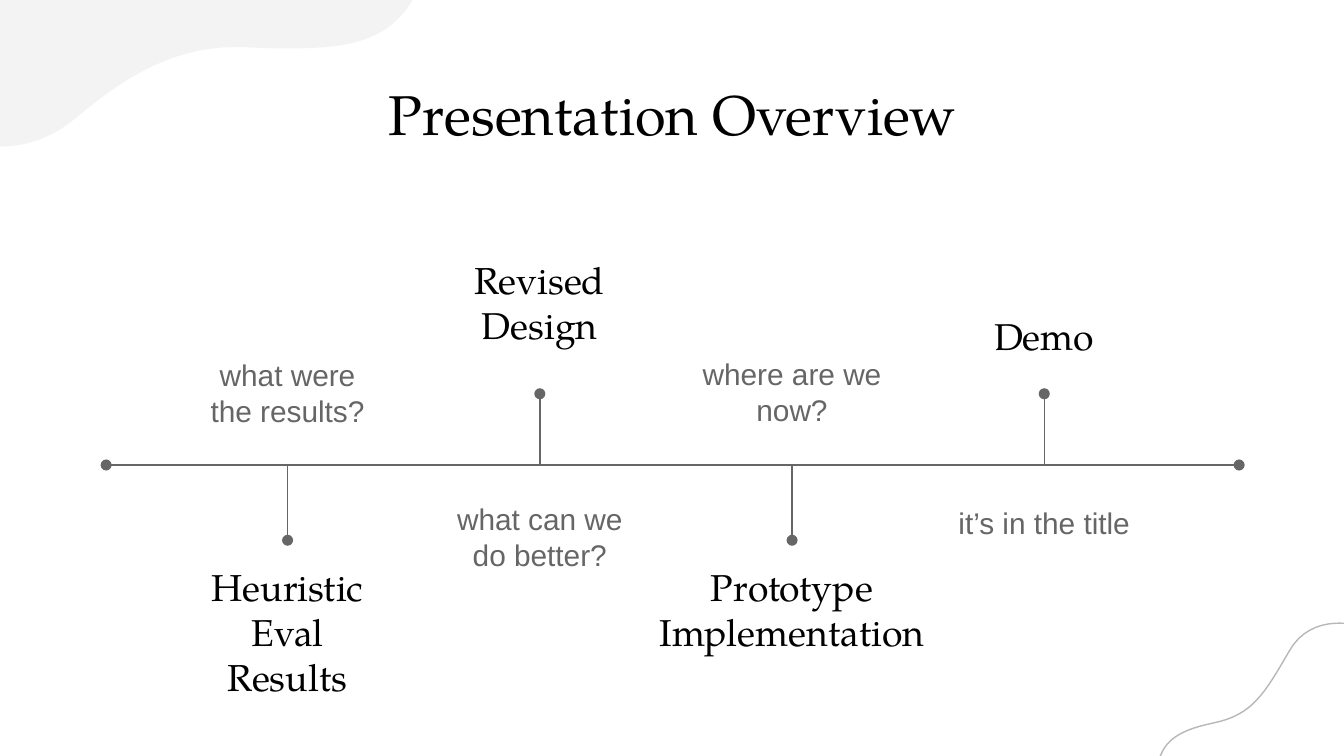
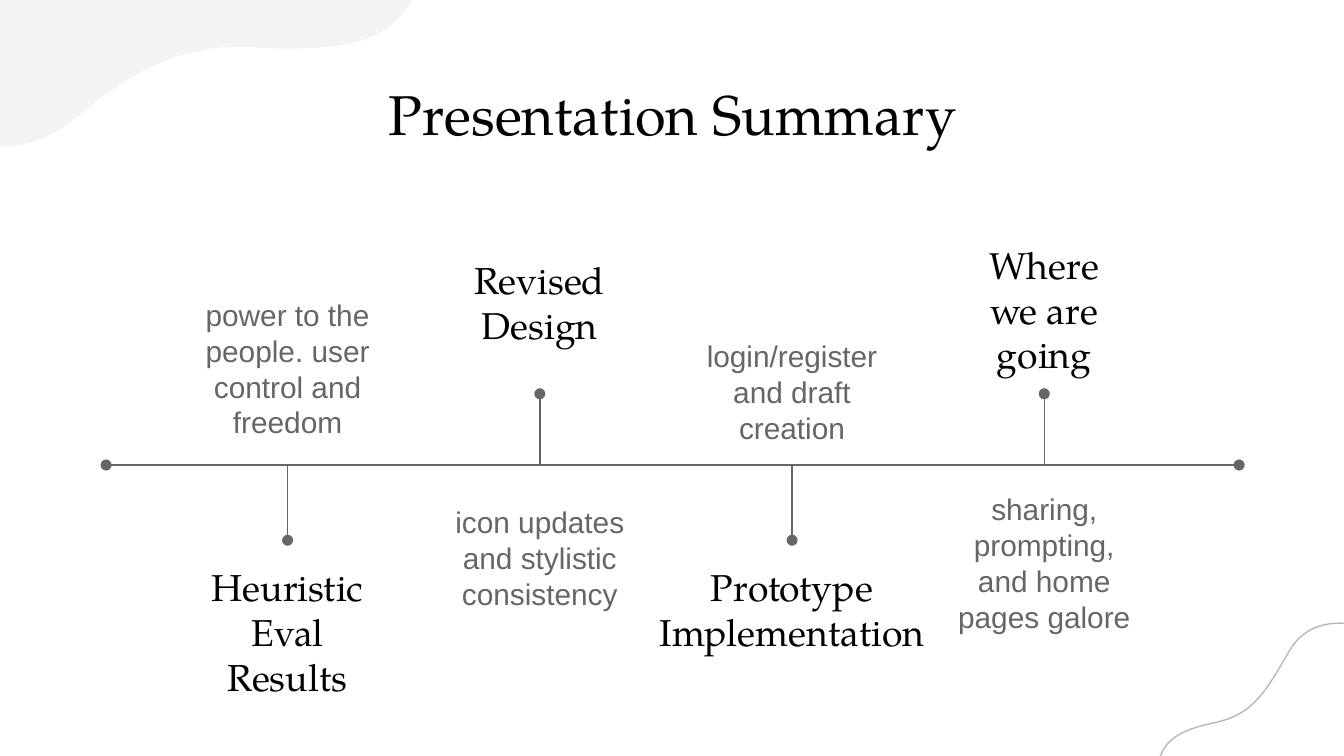
from dataclasses import dataclass
from typing import Optional

from lxml.etree import SubElement
from pptx import Presentation
from pptx.dml.color import RGBColor
from pptx.enum.shapes import MSO_CONNECTOR
from pptx.enum.text import MSO_ANCHOR, PP_ALIGN
from pptx.oxml.ns import qn
from pptx.shapes.autoshape import Shape
from pptx.slide import Slide, SlideLayout
from pptx.text.text import TextFrame
from pptx.util import Inches, Pt

SERIF, SANS = "TeX Gyre Pagella", "Arial"
BLACK, GREY, PALE, RULE = "000000", "666666", "F3F3F3", "B7B7B7"

# Timeline: the axis and four evenly spaced stops
LEFT, RIGHT, AXIS = 0.79, 9.22, 3.46
LOW, HIGH = 4.02, 2.93
STOPS = [2.14 + 5.63 * i / 3 for i in range(4)]

Point = tuple[float, float]
Curve = tuple[float, float, float, float, float, float]


@dataclass(frozen=True)
class Label:
    text: str
    top: float
    width: float
    height: float


@dataclass(frozen=True)
class Wave:
    start: Point
    curves: list[Curve]
    ends: list[Point]
    fill: Optional[str] = None
    line: Optional[str] = None


@dataclass(frozen=True)
class Page:
    title: str
    heads: list[Label]
    notes: list[Label]


WAVES = [
    Wave((3.07, 0), [
        (2.91, 0.27, 2.66, 0.36, 2.18, 0.36),
        (2.08, 0.36, 1.96, 0.36, 1.82, 0.35),
        (1.8, 0.35, 1.77, 0.35, 1.75, 0.35),
        (1.24, 0.35, 0.86, 0.63, 0.55, 0.89),
        (0.39, 1.02, 0.2, 1.09, 0.01, 1.09),
        (-0.21, 1.09, -0.42, 0.99, -0.56, 0.8),
    ], [(-0.56, 0)], fill=PALE),
    Wave((8.61, 5.72), [
        (8.64, 5.53, 8.74, 5.44, 9.03, 5.38),
        (9.32, 5.32, 9.41, 5.16, 9.59, 4.85),
        (9.76, 4.54, 10.13, 4.66, 10.13, 4.66),
    ], [(10.13, 5.72)], line=RULE),
]

HEADS = [
    Label("Heuristic Eval Results", 4.35, 1.44, 0.7),
    Label("Revised Design", 2.05, 1.26, 0.4),
    Label("Prototype Implementation", 4.33, 2.28, 0.4),
]

PAGES = [
    Page("Presentation Overview", HEADS + [Label("Demo", 2.3, 1.07, 0.4)], [
        Label("what were the results?", 2.57, 1.54, 0.7),
        Label("what can we do better?", 3.64, 1.54, 0.7),
        Label("where are we now?", 2.55, 1.54, 0.73),
        Label("it’s in the title", 3.5, 1.54, 0.77),
    ]),
    Page("Presentation Summary",
         HEADS + [Label("Where we are going", 2.1, 1.07, 0.4)], [
             Label("power to the people. user control and freedom", 2.39, 1.54, 0.7),
             Label("icon updates and stylistic consistency", 3.8, 1.54, 0.7),
             Label("login/register and draft creation", 2.55, 1.54, 0.73),
             Label("sharing, prompting, and home pages galore", 3.8, 1.54, 0.77),
         ]),
]


def color(code: str) -> RGBColor:
    return RGBColor.from_string(code)


def write(frame: TextFrame, text: str, font: str, size: int, code: str,
          inset: float, anchor: MSO_ANCHOR) -> None:
    frame.text = text
    frame.word_wrap = True
    frame.vertical_anchor = anchor
    frame.margin_left = frame.margin_right = Inches(inset)
    frame.margin_top = frame.margin_bottom = Inches(inset)
    para = frame.paragraphs[0]
    para.alignment = PP_ALIGN.CENTER
    para.font.name = font
    para.font.size = Pt(size)
    para.font.color.rgb = color(code)


def trace(wave: Wave, steps: int = 16) -> list[Point]:
    """Turn the Bezier curves of a wave into short straight steps."""
    points = [wave.start]
    for ax, ay, bx, by, ex, ey in wave.curves:
        sx, sy = points[-1]
        for i in range(1, steps + 1):
            t = i / steps
            u = 1 - t
            p, q, r, s = u ** 3, 3 * u * u * t, 3 * u * t * t, t ** 3
            points.append((p * sx + q * ax + r * bx + s * ex,
                           p * sy + q * ay + r * by + s * ey))
    return points + wave.ends


def draw_wave(slide: Slide, wave: Wave) -> Shape:
    first, *rest = [(Inches(x), Inches(y)) for x, y in trace(wave)]
    pen = slide.shapes.build_freeform(*first)
    pen.add_line_segments(rest, close=True)
    shape = pen.convert_to_shape()
    shape.shadow.inherit = False
    if wave.fill:
        shape.fill.solid()
        shape.fill.fore_color.rgb = color(wave.fill)
    else:
        shape.fill.background()
    if wave.line:
        shape.line.color.rgb = color(wave.line)
        shape.line.width = Pt(0.75)
    else:
        shape.line.fill.background()
    return shape


def draw_line(group, start: Point, end: Point, *dots: str) -> None:
    line = group.shapes.add_connector(
        MSO_CONNECTOR.STRAIGHT, *map(Inches, start + end))
    line.line.color.rgb = color(GREY)
    line.line.width = Pt(0.75)
    props = line.element.spPr
    for dot in dots:
        SubElement(props.find(qn("a:ln")), qn(dot), type="oval")
    SubElement(props, qn("a:effectLst"))


def draw_axis(slide: Slide) -> None:
    group = slide.shapes.add_group_shape()
    draw_line(group, (LEFT, AXIS), (RIGHT, AXIS), "a:headEnd", "a:tailEnd")
    for i, x in enumerate(STOPS):
        draw_line(group, (x, AXIS), (x, HIGH if i % 2 else LOW), "a:tailEnd")


def draw_label(slide: Slide, mid: float, label: Label,
               font: str, size: int, code: str) -> None:
    box = slide.shapes.add_textbox(
        Inches(mid - label.width / 2), Inches(label.top),
        Inches(label.width), Inches(label.height))
    write(box.text_frame, label.text, font, size, code, 0.1, MSO_ANCHOR.MIDDLE)


def set_layout(layout: SlideLayout) -> None:
    title = layout.placeholders[0]
    title.left, title.top = Inches(0.79), Inches(0.59)
    title.width, title.height = Inches(8.43), Inches(0.63)


def draw_page(slide: Slide, page: Page) -> None:
    write(slide.shapes.title.text_frame, page.title, SERIF, 30, BLACK,
          0, MSO_ANCHOR.TOP)
    for x, head, note in zip(STOPS, page.heads, page.notes):
        draw_label(slide, x, head, SERIF, 20, BLACK)
        draw_label(slide, x, note, SANS, 16, GREY)
    draw_axis(slide)


def main() -> None:
    deck = Presentation()
    # Widescreen, 16 to 9
    deck.slide_width, deck.slide_height = Inches(10), Inches(10 * 9 / 16)
    layout = deck.slide_layouts[5]
    set_layout(layout)
    slides = [deck.slides.add_slide(layout) for _ in PAGES]
    # Shared waves move to the layout, behind every slide
    for wave in WAVES:
        layout.shapes.element.append(draw_wave(slides[0], wave).element)
    for slide, page in zip(slides, PAGES):
        draw_page(slide, page)
    deck.save("out.pptx")


if __name__ == "__main__":
    main()
